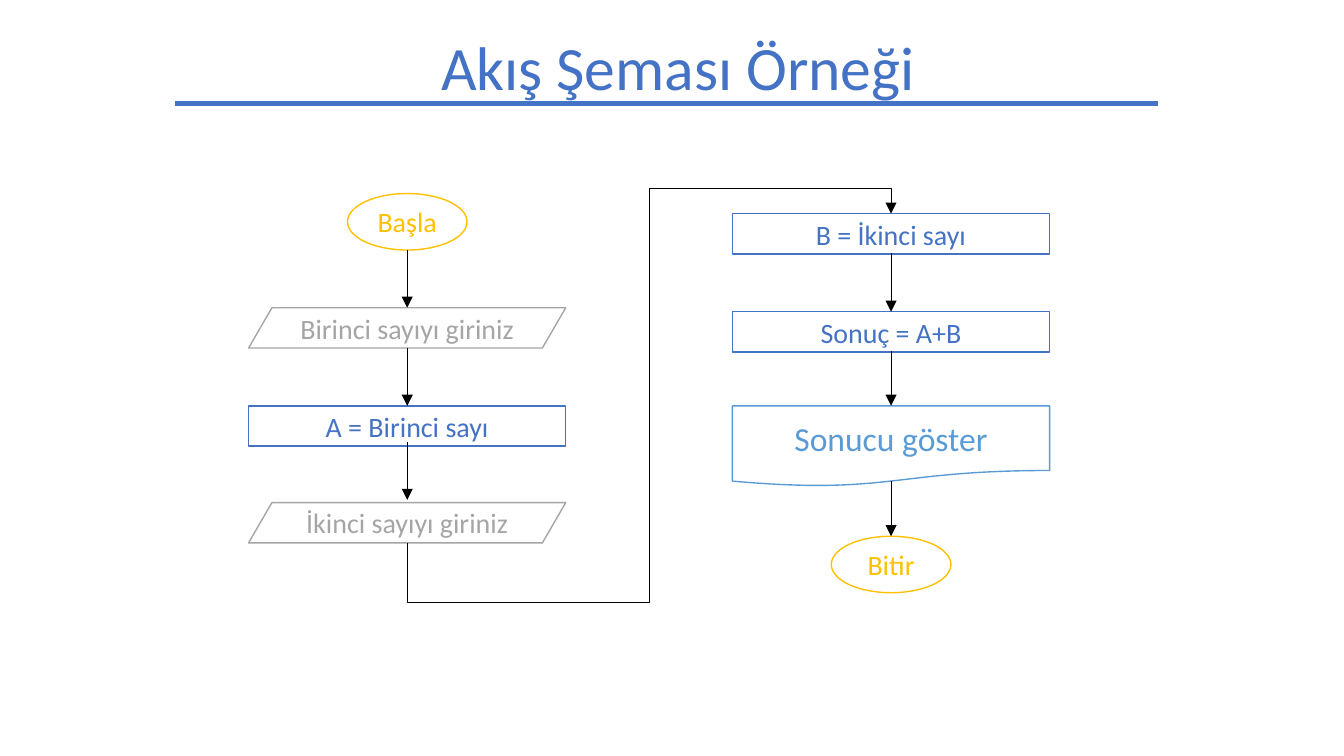
from lxml import etree
from pptx import Presentation
from pptx.dml.color import RGBColor
from pptx.enum.shapes import MSO_CONNECTOR, MSO_SHAPE
from pptx.enum.text import MSO_ANCHOR, PP_ALIGN
from pptx.oxml.ns import qn
from pptx.util import Inches, Pt

OVAL = MSO_SHAPE.OVAL
RECT = MSO_SHAPE.RECTANGLE
SLANT = MSO_SHAPE.PARALLELOGRAM
PAPER = MSO_SHAPE.FLOWCHART_DOCUMENT
LINE = MSO_CONNECTOR.STRAIGHT
ELBOW = MSO_CONNECTOR.ELBOW
CENTER = PP_ALIGN.CENTER
MIDDLE = MSO_ANCHOR.MIDDLE

THEME = {
    "font": "Calibri",
    "blue": RGBColor.from_string("4472C4"),
    "gold": RGBColor.from_string("FFC000"),
    "gray": RGBColor.from_string("A5A5A5"),
    "sky": RGBColor.from_string("5B9BD5"),
    "black": RGBColor.from_string("000000"),
    "title": Pt(33),
    "large": Pt(18),
    "body": Pt(15),
    "edge": Pt(0.75),
    "thin": Pt(0.5),
    "thick": Pt(2.25),
}
TIGHT = {"margin_left": 0.07, "margin_right": 0.07,
         "margin_top": 0.04, "margin_bottom": 0.04}
WIDE = {"margin_left": 0.1, "margin_right": 0.1,
        "margin_top": 0.05, "margin_bottom": 0.05}


def write(shape, text, color, size, inset):
    frame = shape.text_frame
    form = {"word_wrap": True, "vertical_anchor": MIDDLE}
    form.update({key: Inches(gap) for key, gap in inset.items()})
    for key, value in form.items():
        setattr(frame, key, value)
    para = frame.paragraphs[0]
    para.alignment = CENTER
    run = para.add_run()
    run.text = text
    run.font.color.rgb = THEME[color]
    for key, value in {"name": THEME["font"], "size": THEME[size]}.items():
        setattr(run.font, key, value)
    return para


def link(kind, start, end, color, width, arrow):
    line = slide.shapes.add_connector(kind, *map(Inches, start + end))
    line.line.color.rgb = THEME[color]
    line.line.width = THEME[width]
    props = line._element.spPr
    if arrow:
        tail = etree.SubElement(props.find(qn("a:ln")), qn("a:tailEnd"))
        tail.set("type", "triangle")
    etree.SubElement(props, qn("a:effectLst"))
    return props


deck = Presentation()
deck.slide_width = Inches(10)
deck.slide_height = Inches(10 * 9 / 16)
slide = deck.slides.add_slide(deck.slide_layouts[6])

title = slide.shapes.add_textbox(Inches(1.4), Inches(0.16), Inches(7.29), Inches(0.73))
write(title, "Akış Şeması Örneği", "blue", "title", WIDE).line_spacing = 0.9

LEFT, RIGHT = 3.03, 6.63
SIZES = {OVAL: (0.89, 0.42), RECT: (2.36, 0.3), SLANT: (2.36, 0.3), PAPER: (2.36, 0.6)}
STEPS = [
    (OVAL, LEFT, 1.44, "Başla", "gold", "body", TIGHT),
    (SLANT, LEFT, 2.29, "Birinci sayıyı giriniz", "gray", "body", TIGHT),
    (RECT, LEFT, 3.02, "A = Birinci sayı", "blue", "body", TIGHT),
    (SLANT, LEFT, 3.74, "İkinci sayıyı giriniz", "gray", "body", TIGHT),
    (RECT, RIGHT, 1.59, "B = İkinci sayı", "blue", "body", TIGHT),
    (RECT, RIGHT, 2.32, "Sonuç = A+B", "blue", "body", TIGHT),
    (PAPER, RIGHT, 3.02, "Sonucu göster", "sky", "large", WIDE),
    (OVAL, RIGHT, 3.99, "Bitir", "gold", "body", TIGHT),
]
for kind, mid, top, text, color, size, inset in STEPS:
    wide, high = SIZES[kind]
    step = slide.shapes.add_shape(
        kind, Inches(mid - wide / 2), Inches(top), Inches(wide), Inches(high))
    step.shadow.inherit = False
    step.fill.background()
    step.line.color.rgb = THEME[color]
    step.line.width = THEME["edge"]
    if kind == SLANT:
        step.adjustments[0] = 0.58
    write(step, text, color, size, inset)

ARROWS = [
    (LEFT, 1.86, 2.29), (LEFT, 2.59, 3.02), (LEFT, 3.29, 3.72),
    (RIGHT, 1.88, 2.32), (RIGHT, 2.61, 3.02), (RIGHT, 3.58, 3.99),
]
for mid, top, base in ARROWS:
    link(LINE, (mid, top), (mid, base), "black", "thin", True)

mid, half = (LEFT + RIGHT) / 2, (RIGHT - LEFT) / 2
low, high = 4.04, 1.59
level, rise = (low + high) / 2, (low - high) / 2
bend = link(ELBOW, (mid + rise, level + half), (mid - rise, level - half),
            "black", "thin", True)
bend.find(qn("a:xfrm")).set("rot", "5400000")
geom = bend.find(qn("a:prstGeom"))
geom.set("prst", "bentConnector5")
for old in geom.findall(qn("a:avLst")):
    geom.remove(old)
guides = etree.SubElement(geom, qn("a:avLst"))
for spot, value in enumerate((-18200, 50000, 107700), 1):
    guide = etree.SubElement(guides, qn("a:gd"))
    guide.set("name", f"adj{spot}")
    guide.set("fmla", f"val {value}")

link(LINE, (1.3, 0.77), (8.62, 0.77), "blue", "thick", False)

deck.save("out.pptx")
